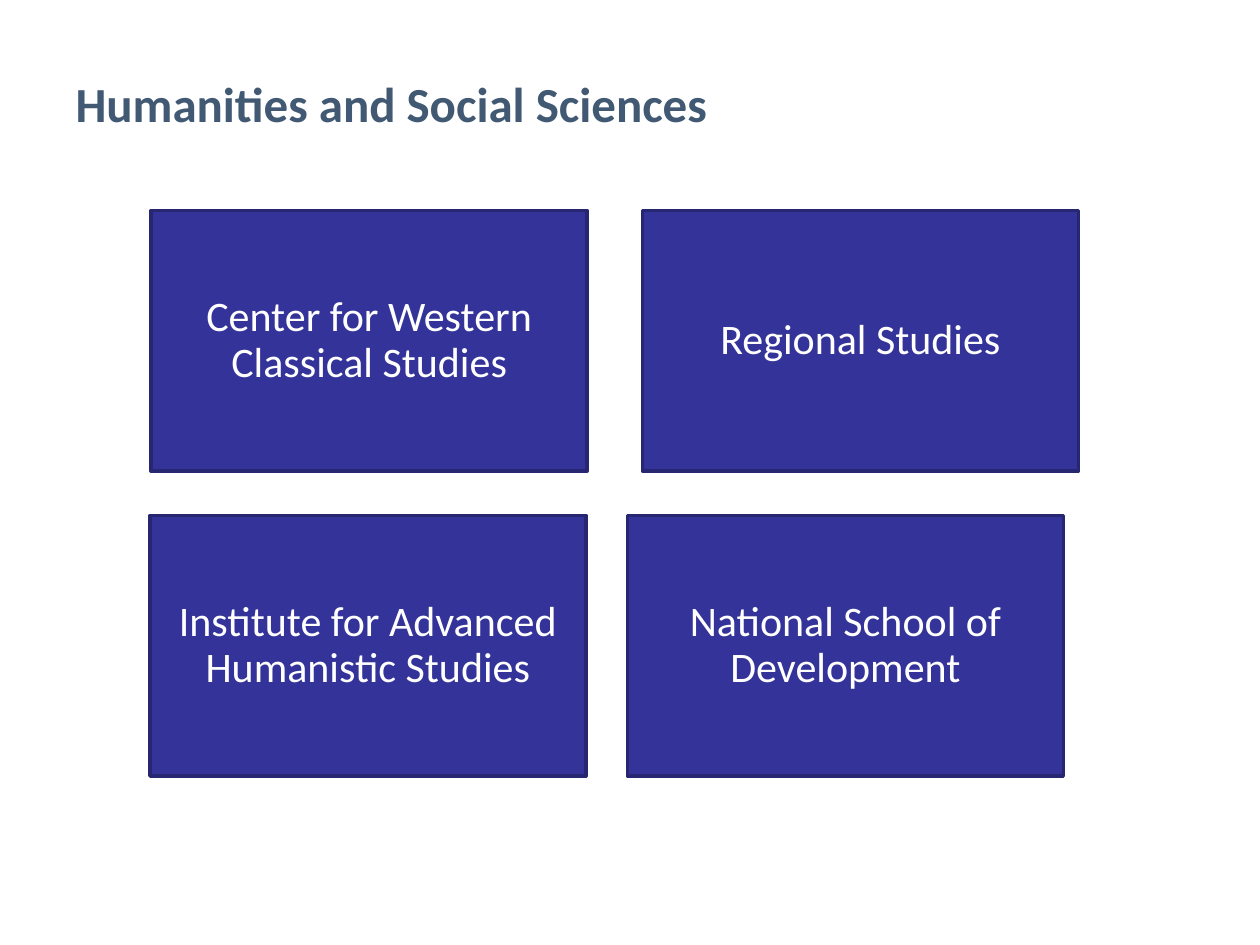
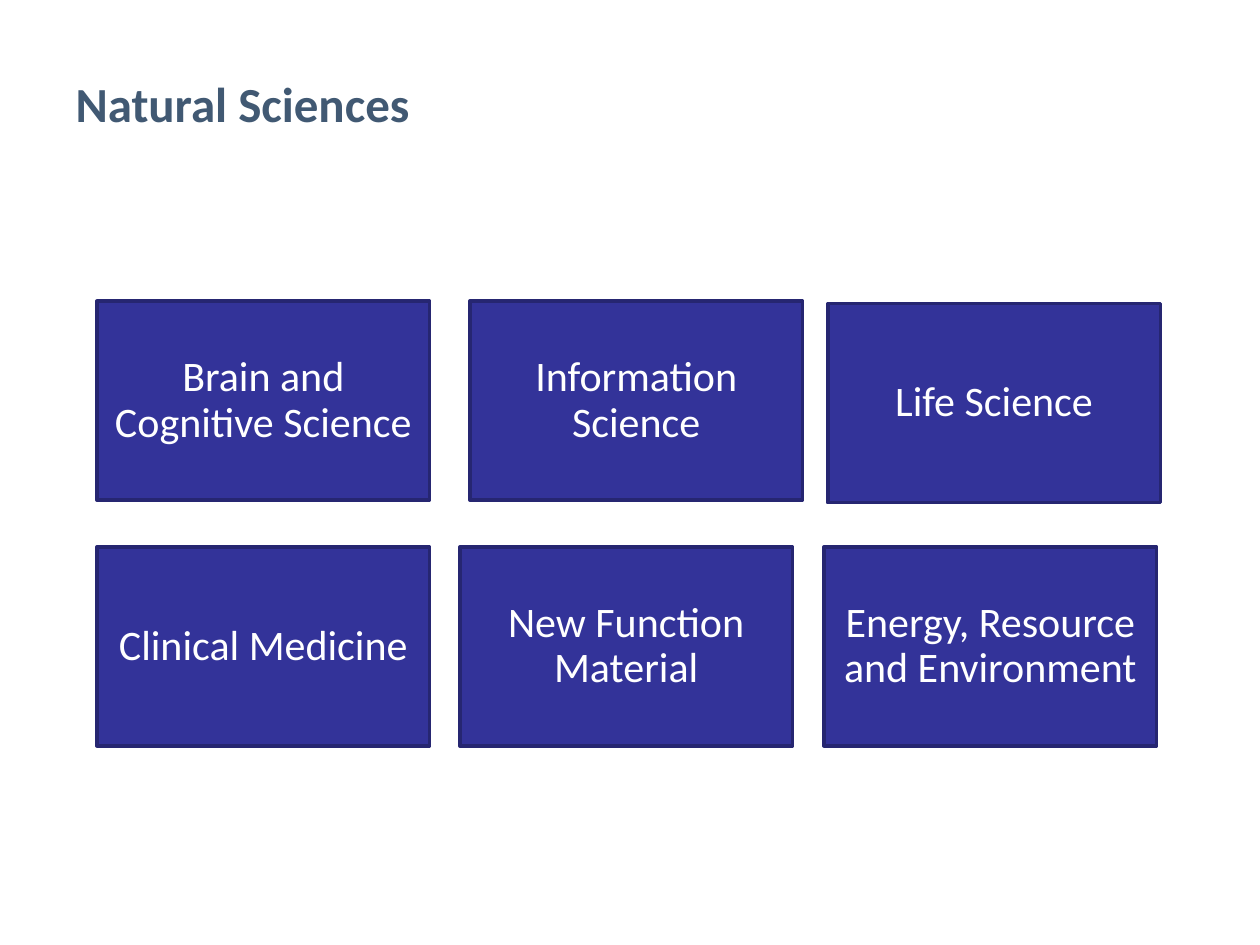
from pptx import Presentation
from pptx.dml.color import RGBColor
from pptx.enum.shapes import MSO_SHAPE
from pptx.enum.text import MSO_ANCHOR, MSO_AUTO_SIZE, PP_ALIGN
from pptx.util import Inches, Pt

SLIDES = [
    {
        "title": "Humanities and Social Sciences",
        "cards": [
            ["Center for Western Classical Studies", "Regional Studies"],
            ["Institute for Advanced Humanistic Studies", "National School of Development"],
        ],
        "grid": {"origin": (1.19, 1.67), "size": (3.46, 2.07), "gap": (0.33, 0.35)},
        "nudges": {(0, 0): (0.01, 0), (0, 1): (0.12, 0)},
    },
    {
        "title": "Natural Sciences",
        "cards": [
            ["Brain and Cognitive Science", "Information Science", "Life Science"],
            ["Clinical Medicine", "New Function Material", "Energy, Resource and Environment"],
        ],
        "grid": {"origin": (0.77, 2.39), "size": (2.64, 1.58), "gap": (0.24, 0.37)},
        "nudges": {(0, 1): (0.08, 0), (0, 2): (0.04, 0.02), (1, 2): (0.01, 0)},
    },
]

THEME = {
    "fill": RGBColor.from_string("333399"),
    "line": RGBColor.from_string("262671"),
    "line_width": Pt(2),
    "title_box": (0.5, 0.39, 9, 0.86),
    "title": {"name": "Calibri", "size": Pt(28), "bold": True, "color": "415973"},
    "card": {"name": "Calibri", "size": Pt(24), "bold": False, "color": "FFFFFF"},
}
FRAME = {
    "word_wrap": True,
    "auto_size": MSO_AUTO_SIZE.NONE,
    "vertical_anchor": MSO_ANCHOR.MIDDLE,
}
CARD_MARGINS = {f"margin_{side}": Inches(0.1) for side in ("left", "top", "right", "bottom")}


def set_all(obj, values):
    for name, value in values.items():
        setattr(obj, name, value)


def write(tf, text, style, paragraph, frame=FRAME):
    set_all(tf, frame)
    p = tf.paragraphs[0]
    set_all(p, paragraph)
    r = p.add_run()
    r.text = text
    set_all(r.font, {k: v for k, v in style.items() if k != "color"})
    r.font.color.rgb = RGBColor.from_string(style["color"])


def add_title(s, text):
    sp = s.shapes.title
    box = map(Inches, THEME["title_box"])
    set_all(sp, dict(zip(("left", "top", "width", "height"), box)))
    write(sp.text_frame, text, THEME["title"], {"alignment": PP_ALIGN.LEFT})


def add_card(s, text, place, size):
    sp = s.shapes.add_shape(MSO_SHAPE.RECTANGLE, *map(Inches, (*place, *size)))
    sp.shadow.inherit = False
    sp.fill.solid()
    sp.fill.fore_color.rgb = THEME["fill"]
    sp.line.color.rgb = THEME["line"]
    sp.line.width = THEME["line_width"]
    write(sp.text_frame, text, THEME["card"],
          {"alignment": PP_ALIGN.CENTER, "line_spacing": 0.9}, FRAME | CARD_MARGINS)


def add_cards(s, cards, grid, nudges):
    for row, texts in enumerate(cards):
        for col, text in enumerate(texts):
            place = [
                start + step * (length + gap) + nudge
                for start, step, length, gap, nudge in zip(
                    grid["origin"], (col, row), grid["size"], grid["gap"],
                    nudges.get((row, col), (0, 0)))
            ]
            add_card(s, text, place, grid["size"])


def main():
    prs = Presentation()
    set_all(prs, {"slide_width": Inches(10), "slide_height": Inches(7.5)})
    for content in SLIDES:
        s = prs.slides.add_slide(prs.slide_layouts.get_by_name("Title Only"))
        add_title(s, content["title"])
        add_cards(s, content["cards"], content["grid"], content["nudges"])
    prs.save("out.pptx")


if __name__ == "__main__":
    main()
